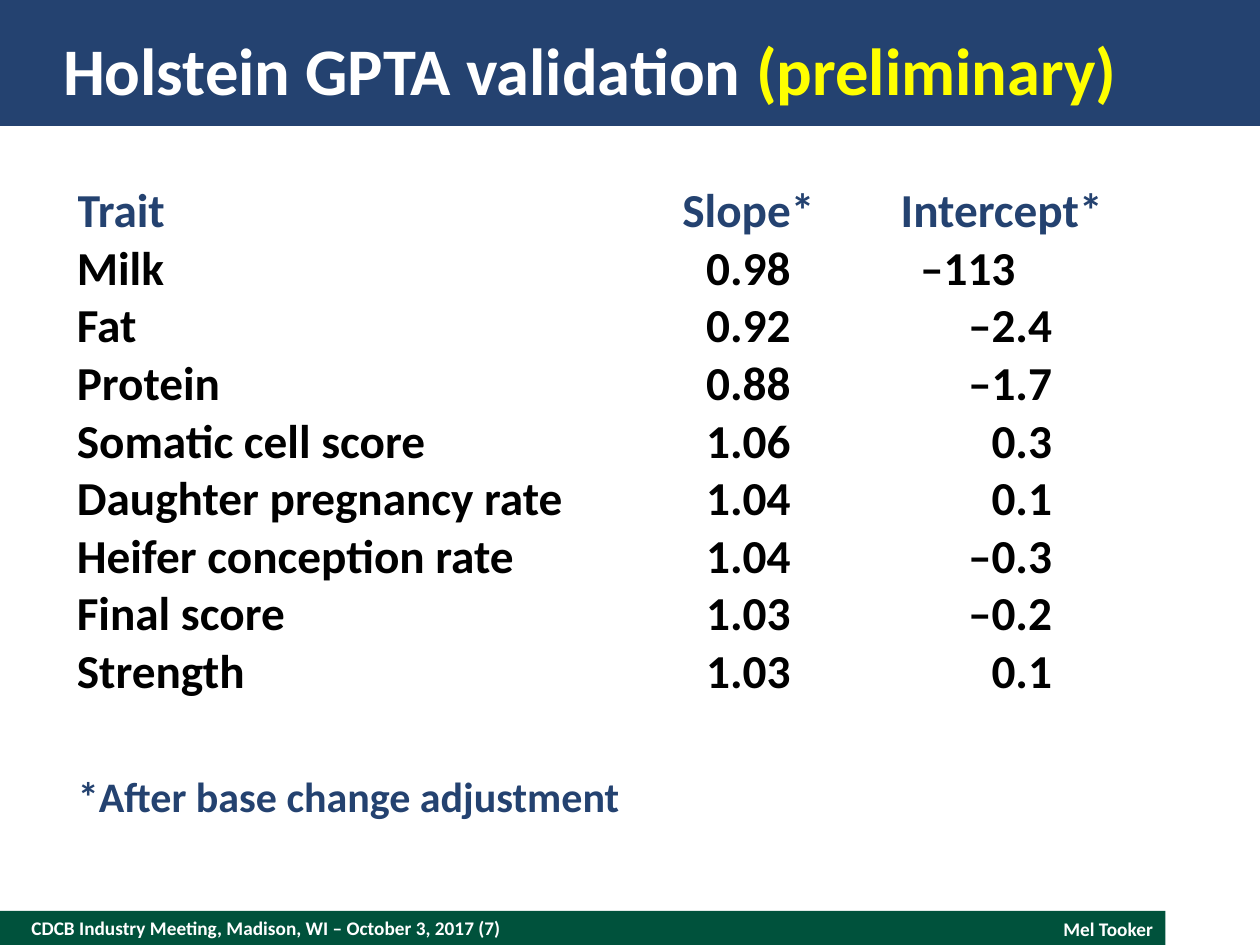
from dataclasses import dataclass

from lxml import etree
from pptx import Presentation
from pptx.dml.color import RGBColor
from pptx.enum.shapes import MSO_SHAPE
from pptx.enum.text import MSO_ANCHOR, MSO_AUTO_SIZE, PP_ALIGN
from pptx.oxml.ns import qn
from pptx.util import Inches, Pt

RECT = MSO_SHAPE.RECTANGLE
MIDDLE, BOTTOM = MSO_ANCHOR.MIDDLE, MSO_ANCHOR.BOTTOM
LEFT, CENTER, RIGHT = PP_ALIGN.LEFT, PP_ALIGN.CENTER, PP_ALIGN.RIGHT
FIXED, GROW = MSO_AUTO_SIZE.NONE, MSO_AUTO_SIZE.SHAPE_TO_FIT_TEXT


@dataclass(frozen=True)
class Theme:
    font: str = "Calibri"
    navy: str = "244270"
    green: str = "00523C"
    white: str = "FFFFFF"
    yellow: str = "FFFF00"
    black: str = "000000"
    title: float = 38
    table: float = 27
    note: float = 24
    footer: float = 11


THEME = Theme()
WIDTH, HEIGHT = 10, 7.5
FOOTER_TOP, FOOTER_HEIGHT = 7.23, 0.27
COLUMNS = (4.79, 1.08, 2.74)
ROW_HEIGHT = 0.45
INTERCEPT_INSET, DECIMAL_TAB = 0.2, 1.38
HEADERS = ("Trait", "Slope*", "Intercept*")
TRAITS = (
    ("Milk", "0.98", "–113"),
    ("Fat", "0.92", "–2.4"),
    ("Protein", "0.88", "–1.7"),
    ("Somatic cell score", "1.06", "0.3"),
    ("Daughter pregnancy rate", "1.04", "0.1"),
    ("Heifer conception rate", "1.04", "–0.3"),
    ("Final score", "1.03", "–0.2"),
    ("Strength", "1.03", "0.1"),
)


def style(p, size, color, align=LEFT):
    p.alignment = align
    p.font.name = THEME.font
    p.font.size = Pt(size)
    p.font.bold = True
    p.font.color.rgb = RGBColor.from_string(color)


def set_margins(target, left=0):
    target.margin_left = Inches(left)
    target.margin_top = target.margin_right = target.margin_bottom = 0


def add_bar(slide, top, width, height, color):
    sp = slide.shapes.add_shape(RECT, 0, Inches(top), Inches(width), Inches(height))
    sp.shadow.inherit = False
    sp.fill.solid()
    sp.fill.fore_color.rgb = RGBColor.from_string(color)
    sp.line.fill.background()


def add_text(slide, box, text, size, color, align=LEFT, wrap=True):
    tf = slide.shapes.add_textbox(*map(Inches, box)).text_frame
    tf.word_wrap = wrap
    tf.auto_size = GROW
    p = tf.paragraphs[0]
    p.text = text
    style(p, size, color, align)
    return tf


def place_title(slide, text, accent):
    title = slide.shapes.title
    slide.shapes.element.append(title.element)
    title.left, title.top, title.width, title.height = map(Inches, (0.5, 0.2, 9, 0.7))
    tf = title.text_frame
    tf.auto_size = FIXED
    tf.vertical_anchor = MIDDLE
    set_margins(tf)
    p = tf.paragraphs[0]
    p.add_run().text = text
    r = p.add_run()
    r.text = accent
    style(p, THEME.title, THEME.white)
    r.font.color.rgb = RGBColor.from_string(THEME.yellow)


def add_decimal_tab(p):
    tabs = etree.SubElement(p._p.get_or_add_pPr(), qn("a:tabLst"))
    etree.SubElement(tabs, qn("a:tab"), pos=str(Inches(DECIMAL_TAB)), algn="dec")


def fill_cell(cell, text, column, is_header):
    cell.fill.background()
    cell.vertical_anchor = BOTTOM
    is_intercept = column == 2
    set_margins(cell, INTERCEPT_INSET if is_intercept else 0)
    p = cell.text_frame.paragraphs[0]
    has_tab = is_intercept and not is_header
    if has_tab:
        add_decimal_tab(p)
    p.text = f"\t{text}" if has_tab else text
    align = LEFT if column == 0 or has_tab else CENTER
    style(p, THEME.table, THEME.navy if is_header else THEME.black, align)


def add_trait_table(slide):
    rows = (HEADERS, *TRAITS)
    box = (0.61, 1.45, sum(COLUMNS), ROW_HEIGHT * len(rows))
    table = slide.shapes.add_table(len(rows), len(COLUMNS), *map(Inches, box)).table
    table.horz_banding = False
    for column, width in zip(table.columns, COLUMNS):
        column.width = Inches(width)
    for i, values in enumerate(rows):
        for j, text in enumerate(values):
            fill_cell(table.cell(i, j), text, j, i == 0)


def add_footer(slide):
    add_bar(slide, FOOTER_TOP, 9.25, FOOTER_HEIGHT, THEME.green)
    tf = add_text(slide, (0.25, FOOTER_TOP, 6.5, FOOTER_HEIGHT),
                  "CDCB Industry Meeting, Madison, WI – October 3, 2017 (7)",
                  THEME.footer, THEME.white)
    tf.auto_size = FIXED
    tf.vertical_anchor = MIDDLE
    set_margins(tf)
    add_text(slide, (7.25, FOOTER_TOP, 2, 0.29), "Mel Tooker",
             THEME.footer, THEME.white, RIGHT)


def main():
    prs = Presentation()
    prs.slide_width, prs.slide_height = Inches(WIDTH), Inches(HEIGHT)
    slide = prs.slides.add_slide(prs.slide_layouts[5])
    add_footer(slide)
    add_bar(slide, 0, WIDTH, 1, THEME.navy)
    place_title(slide, "Holstein GPTA validation ", "(preliminary)")
    add_trait_table(slide)
    add_text(slide, (0.52, 6.07, 4.63, 0.5), "*After base change adjustment",
             THEME.note, THEME.navy, wrap=False)
    prs.save("out.pptx")


if __name__ == "__main__":
    main()
